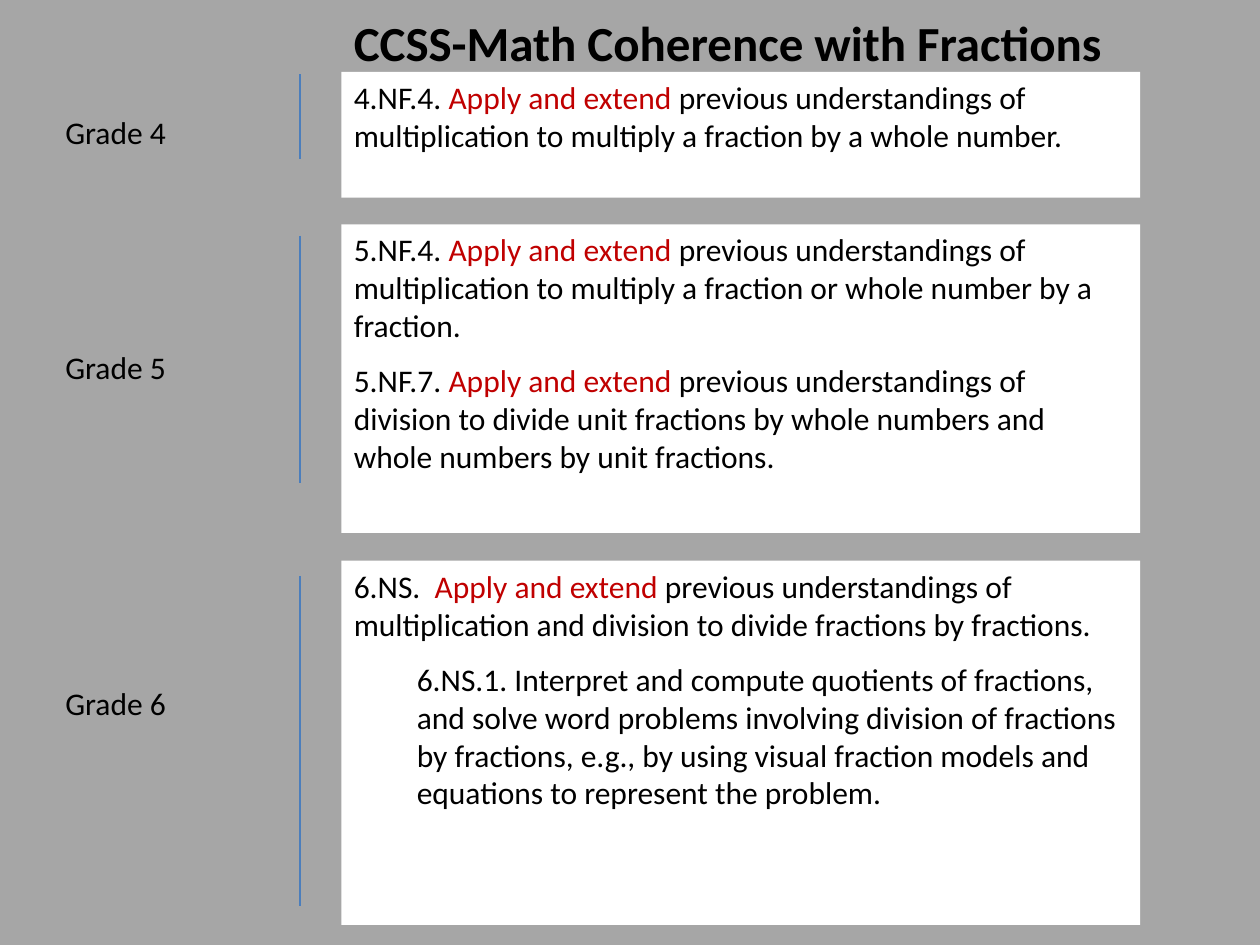
from lxml import etree
from pptx import Presentation
from pptx.dml.color import RGBColor
from pptx.enum.shapes import MSO_CONNECTOR, MSO_SHAPE
from pptx.enum.text import MSO_ANCHOR, PP_ALIGN
from pptx.oxml.ns import qn
from pptx.util import Inches, Pt

RECT, LINE = MSO_SHAPE.RECTANGLE, MSO_CONNECTOR.STRAIGHT
TOP, LEFT = MSO_ANCHOR.TOP, PP_ALIGN.LEFT
BLACK, RED, WHITE, BLUE, GRAY = "000000", "C00000", "FFFFFF", "4B7EBC", "A6A6A6"

TITLE = "CCSS-Math Coherence with Fractions"
KEY = "Apply and extend "
# Each grade: name, box top and height, label top, rule top and bottom, paragraphs
GRADES = [
    ("Grade 4", (0.57, 1), 0.85, (0.59, 1.26), [
        (0, "4.NF.4. ", KEY, "previous understandings of multiplication to "
         "multiply a fraction by a whole number."),
    ]),
    ("Grade 5", (1.78, 2.45), 2.71, (1.87, 3.83), [
        (0, "5.NF.4. ", KEY, "previous understandings of multiplication to "
         "multiply a fraction or whole number by a fraction."),
        (0, "5.NF.7. ", KEY, "previous understandings of division to divide "
         "unit fractions by whole numbers and whole numbers by unit fractions."),
    ]),
    ("Grade 6", (4.45, 2.89), 5.38, (4.57, 7.19), [
        (0, "6.NS.  ", KEY, "previous understandings of multiplication and "
         "division to divide fractions by fractions."),
        (1, "6.NS.1. Interpret and compute quotients of fractions, and solve "
         "word problems involving division of fractions by fractions, e.g., by "
         "using visual fraction models and equations to represent the problem."),
    ]),
]
NAME_X, RULE_X, BOX_X = 0.42, 2.38, 2.71
NAME_W, BOX_W, TITLE_W, ROW_H = 3, 6.34, 6.87, 0.53


def color(code):
    """Turn a hex string into a colour."""
    return RGBColor.from_string(code)


def write(shape, paras, size=18, bold=False):
    """Fill a shape with paragraphs, each a level and its runs."""
    frame = shape.text_frame
    frame.word_wrap = True
    frame.vertical_anchor = TOP
    for i, (level, *runs) in enumerate(paras):
        para = frame.add_paragraph() if i else frame.paragraphs[0]
        para.level, para.alignment, para.space_after = level, LEFT, Pt(10)
        if level:
            props = para._p.get_or_add_pPr()
            props.set("marL", str(Inches(level / 2)))
            props.set("indent", "0")
        for text in runs:
            run = para.add_run()
            run.text = text
            font = run.font
            font.name, font.size, font.bold = "Calibri", Pt(size), bold
            font.color.rgb = color(RED if text == KEY else BLACK)


def label(slide, x, y, wide, text, **style):
    """Add one line of plain text."""
    area = map(Inches, (x, y, wide, ROW_H))
    write(slide.shapes.add_textbox(*area), [(0, text)], **style)


def panel(slide, top, high, paras):
    """Add a white box of standards."""
    area = map(Inches, (BOX_X, top, BOX_W, high))
    box = slide.shapes.add_shape(RECT, *area)
    box.shadow.inherit = False
    box.fill.solid()
    box.fill.fore_color.rgb = color(WHITE)
    box.line.fill.background()
    write(box, paras)


def rule(slide, top, end):
    """Add a thin upright line."""
    ends = map(Inches, (RULE_X, top, RULE_X, end))
    line = slide.shapes.add_connector(LINE, *ends)
    line.line.color.rgb = color(BLUE)
    line.line.width = Pt(0.75)
    etree.SubElement(line._element.spPr, qn("a:effectLst"))


def main():
    """Build and save the slide."""
    deck = Presentation()
    deck.slide_width, deck.slide_height = Inches(10), Inches(7.5)
    slide = deck.slides.add_slide(deck.slide_layouts[6])
    back = slide.background.fill
    back.solid()
    back.fore_color.rgb = color(GRAY)
    for name, box, row, span, paras in GRADES:
        panel(slide, *box, paras)
        label(slide, NAME_X, row, NAME_W, name)
        rule(slide, *span)
    label(slide, BOX_X, 0.05, TITLE_W, TITLE, size=28, bold=True)
    deck.save("out.pptx")


if __name__ == "__main__":
    main()
